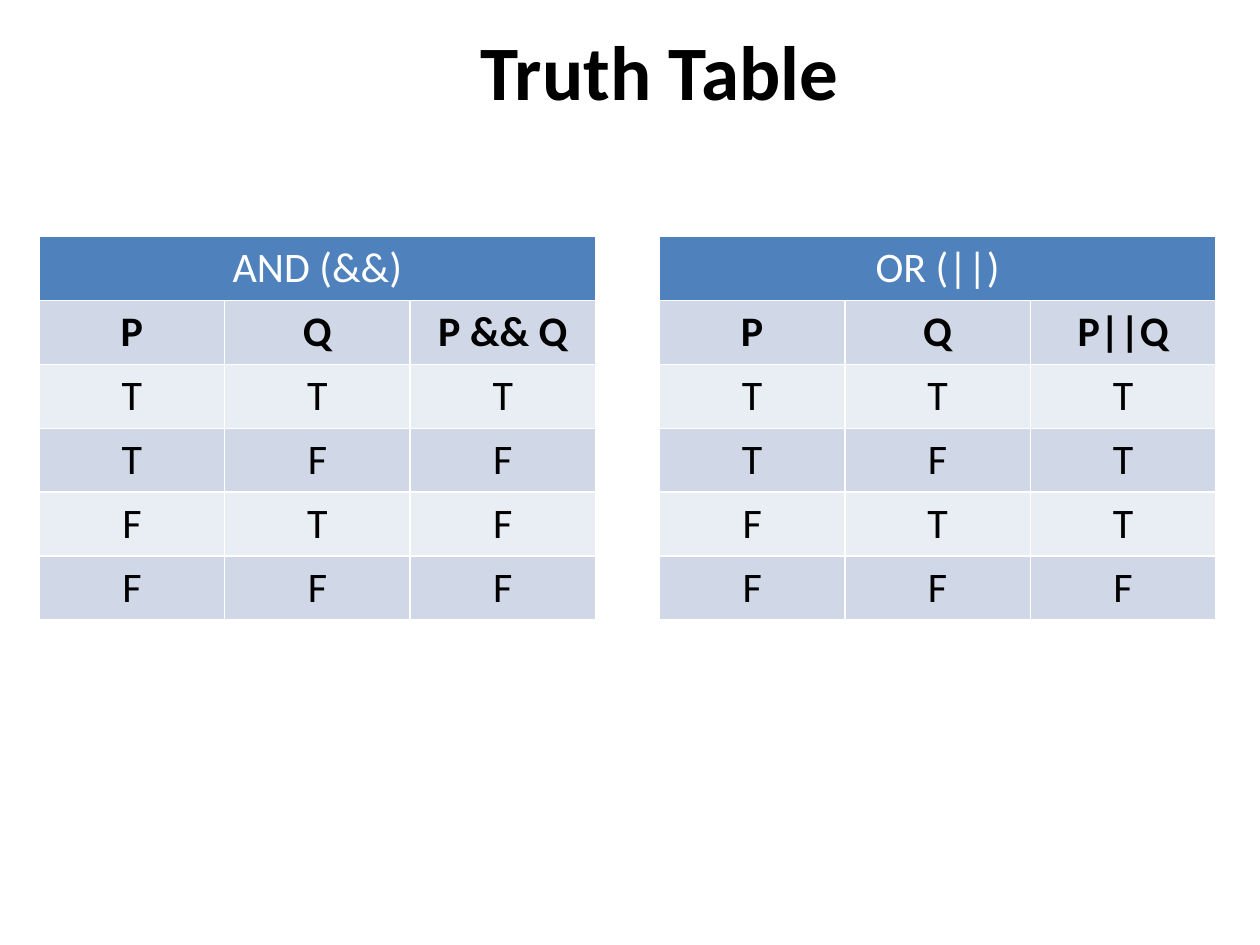
from pptx import Presentation
from pptx.dml.color import RGBColor
from pptx.enum import text
from pptx.util import Pt

WHITE = RGBColor(0xFF, 0xFF, 0xFF)
BLACK = RGBColor(0, 0, 0)
BLUE = RGBColor(0x4F, 0x81, 0xBD)
BANDS = RGBColor(0xE9, 0xED, 0xF4), RGBColor(0xD0, 0xD8, 0xE8)
FACE = "Calibri"

TITLE = "Truth Table"
# left edge, heading, column names, rows of truth values
TABLES = [
    (376.8, "OR (||)", ["P", "Q", "P||Q"], ["TTT", "TFT", "FTT", "FFF"]),
    (22.4, "AND (&&)", ["P", "Q", "P && Q"], ["TTT", "TFF", "FTF", "FFF"]),
]
TOP, COL, ROW = 135.2, 106, 36


def style(para, size, color, bold):
    para.alignment = text.PP_ALIGN.CENTER
    font = para.font
    font.name, font.size, font.bold = FACE, Pt(size), bold
    font.color.rgb = color


def put(cell, words, fill, color, bold=False):
    cell.text = words
    cell.fill.solid()
    cell.fill.fore_color.rgb = fill
    style(cell.text_frame.paragraphs[0], 24, color, bold)


def draw(slide, left, head, names, values):
    rows = [names, *values]
    count, wide = len(rows) + 1, len(names)
    table = slide.shapes.add_table(
        count, wide, Pt(left), Pt(TOP), Pt(COL * wide), Pt(ROW * count)).table
    top = table.cell(0, 0)
    top.merge(table.cell(0, wide - 1))
    put(top, head, BLUE, WHITE)
    for r, row in enumerate(rows, 1):
        for c, words in enumerate(row):
            put(table.cell(r, c), words, BANDS[r % 2], BLACK, r == 1)


def main():
    deck = Presentation()
    deck.slide_width, deck.slide_height = Pt(720), Pt(540)
    slide = deck.slides.add_slide(deck.slide_layouts[5])
    title = slide.shapes.title
    title.left, title.top = Pt(242), Pt(6)
    title.width, title.height = Pt(270), Pt(67.5)
    title.text = TITLE
    title.text_frame.vertical_anchor = text.MSO_ANCHOR.MIDDLE
    style(title.text_frame.paragraphs[0], 44, BLACK, True)
    for item in TABLES:
        draw(slide, *item)
    deck.save("out.pptx")


if __name__ == "__main__":
    main()
